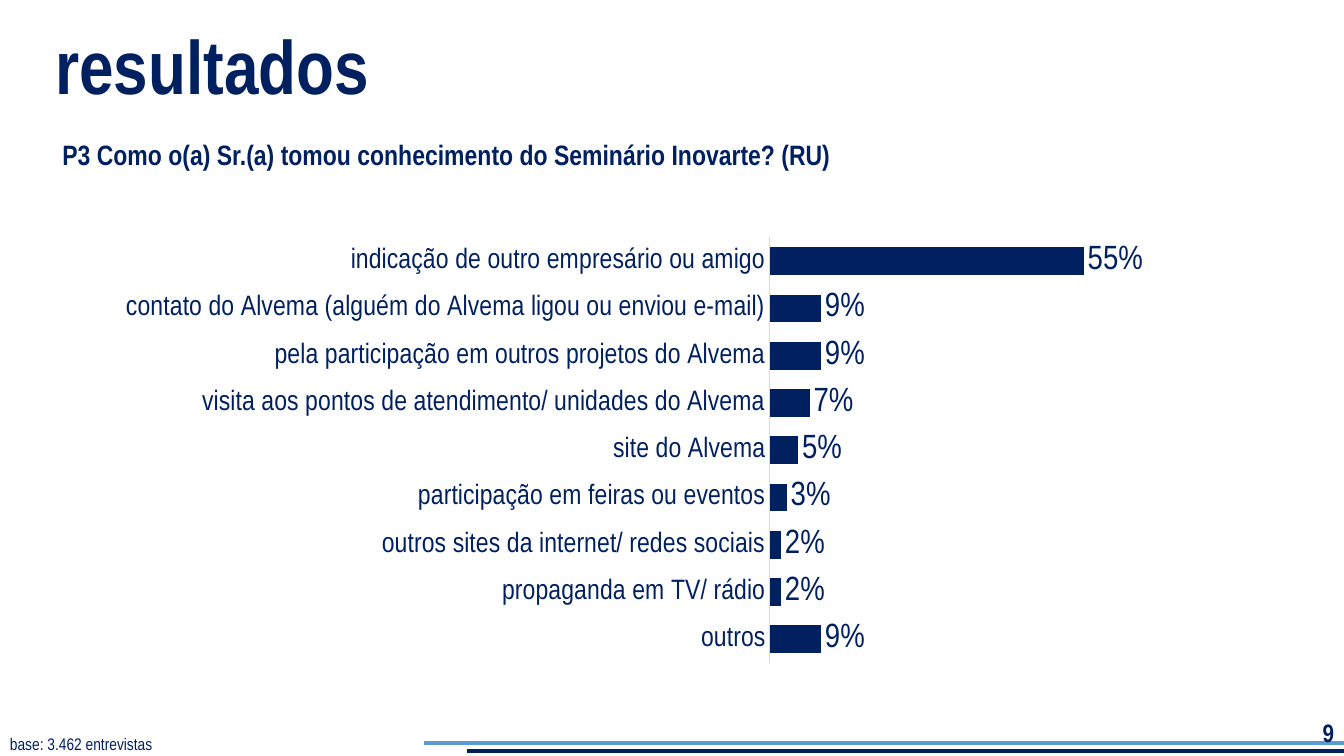
from dataclasses import dataclass

from lxml.etree import SubElement
from pptx import Presentation
from pptx.chart.data import CategoryChartData as ChartData
from pptx.dml.color import RGBColor
from pptx.enum.chart import XL_CHART_TYPE as ChartType
from pptx.enum.chart import XL_LABEL_POSITION as LabelPosition
from pptx.enum.chart import XL_TICK_MARK as TickMark
from pptx.enum.shapes import MSO_CONNECTOR as Connector
from pptx.enum.text import MSO_ANCHOR as Anchor
from pptx.enum.text import MSO_AUTO_SIZE as AutoSize
from pptx.enum.text import PP_ALIGN as Align
from pptx.oxml.ns import qn
from pptx.util import Pt

COLORS = {"navy": "002060", "blue": "5B9BD5", "axis": "D9D9D9", "white": "FFFFFF"}
FONT = "Arial Narrow"
PERCENT = "###0%"
PLOT_AREA = {"x": 0.512, "y": 0.03, "w": 0.199, "h": 0.941}
ANSWERS = {
    "indicação de outro empresário ou amigo": 0.55,
    "contato do Alvema (alguém do Alvema ligou ou enviou e-mail)": 0.09,
    "pela participação em outros projetos do Alvema": 0.09,
    "visita aos pontos de atendimento/ unidades do Alvema": 0.07,
    "site do Alvema": 0.05,
    "participação em feiras ou eventos": 0.03,
    "outros sites da internet/ redes sociais": 0.02,
    "propaganda em TV/ rádio": 0.02,
    "outros": 0.09,
}


@dataclass(frozen=True)
class Box:
    left: float
    top: float
    width: float
    height: float

    def lengths(self):
        return Pt(self.left), Pt(self.top), Pt(self.width), Pt(self.height)


@dataclass(frozen=True)
class Rule:
    left: float
    y: float
    color: str


FOOTER_RULES = [Rule(303, 530.6, "blue"), Rule(333.5, 536.4, "navy")]


def rgb(name: str) -> RGBColor:
    return RGBColor.from_string(COLORS[name])


def style_font(font, size: float, bold: bool = False) -> None:
    font.name = FONT
    font.size = Pt(size)
    font.bold = bold
    font.color.rgb = rgb("navy")


def write_text(shape, text: str, *, size: float, bold: bool = False,
               align=Align.LEFT, anchor=Anchor.TOP, spacing: float = 1.0,
               grow: bool = False) -> None:
    frame = shape.text_frame
    frame.word_wrap = True
    frame.auto_size = AutoSize.SHAPE_TO_FIT_TEXT if grow else AutoSize.NONE
    frame.vertical_anchor = anchor
    paragraph = frame.paragraphs[0]
    paragraph.alignment = align
    paragraph.line_spacing = spacing
    run = paragraph.add_run()
    run.text = text
    style_font(run.font, size, bold)


def add_text(slide, box: Box, text: str, **style) -> None:
    write_text(slide.shapes.add_textbox(*box.lengths()), text, **style)


def add_rule(slide, rule: Rule) -> None:
    line = slide.shapes.add_connector(
        Connector.STRAIGHT, Pt(rule.left), Pt(rule.y), Pt(960), Pt(rule.y))
    line.line.color.rgb = rgb(rule.color)
    line.line.width = Pt(3)
    SubElement(line._element.spPr, qn("a:effectLst"))


def place_plot(chart) -> None:
    plot_area = chart._chartSpace.chart.plotArea
    for previous in plot_area.findall(qn("c:layout")):
        plot_area.remove(previous)
    layout = SubElement(plot_area, qn("c:layout"))
    plot_area.insert(0, layout)
    manual = SubElement(layout, qn("c:manualLayout"))
    settings = {"layoutTarget": "inner", "xMode": "edge", "yMode": "edge", **PLOT_AREA}
    for name, value in settings.items():
        SubElement(manual, qn(f"c:{name}")).set("val", str(value))


def add_answers_chart(slide, box: Box) -> None:
    data = ChartData(number_format=PERCENT)
    data.categories = list(ANSWERS)
    data.add_series("Series 1", list(ANSWERS.values()))
    chart = slide.shapes.add_chart(ChartType.BAR_CLUSTERED, *box.lengths(), data).chart
    chart.has_legend = False
    chart.has_title = False
    chart.font.name = "Calibri"
    chart.font.size = Pt(10)
    place_plot(chart)

    categories = chart.category_axis
    categories.reverse_order = True
    categories.major_tick_mark = categories.minor_tick_mark = TickMark.NONE
    categories.format.line.color.rgb = rgb("axis")
    categories.format.line.width = Pt(0.75)
    style_font(categories.tick_labels.font, 20)

    values = chart.value_axis
    values.minimum_scale, values.maximum_scale = 0, 0.6
    values.has_major_gridlines = False
    values.tick_labels.number_format = PERCENT
    values.tick_labels.number_format_is_linked = False
    values.visible = False

    plot = chart.plots[0]
    plot.gap_width = 71
    plot.vary_by_categories = False
    series = plot.series[0]
    series.format.fill.solid()
    series.format.fill.fore_color.rgb = rgb("navy")
    labels = series.data_labels
    labels.show_value = True
    labels.number_format = PERCENT
    labels.number_format_is_linked = False
    labels.position = LabelPosition.OUTSIDE_END
    style_font(labels.font, 24)


def main() -> None:
    """Build the survey results slide and save it."""
    presentation = Presentation()
    presentation.slide_width, presentation.slide_height = Pt(960), Pt(540)
    slide = presentation.slides.add_slide(presentation.slide_layouts[5])
    slide.background.fill.solid()
    slide.background.fill.fore_color.rgb = rgb("white")
    for rule in FOOTER_RULES:
        add_rule(slide, rule)
    add_text(slide, Box(744, 509, 216, 29), "9", size=18, bold=True,
             align=Align.RIGHT, anchor=Anchor.MIDDLE)
    title = slide.shapes.title
    title.left, title.top, title.width, title.height = Box(32.4, 10, 907, 73).lengths()
    write_text(title, "resultados", size=54, bold=True, grow=True)
    add_text(slide, Box(37.5, 94.5, 720, 39.6),
             "P3 Como o(a) Sr.(a) tomou conhecimento do Seminário Inovarte? (RU)",
             size=20, bold=True)
    add_answers_chart(slide, Box(-80, 160, 1230, 323))
    add_text(slide, Box(0, 513.4, 167, 28.8), "base: 3.462 entrevistas",
             size=12, spacing=1.5, grow=True)
    presentation.save("out.pptx")


if __name__ == "__main__":
    main()
